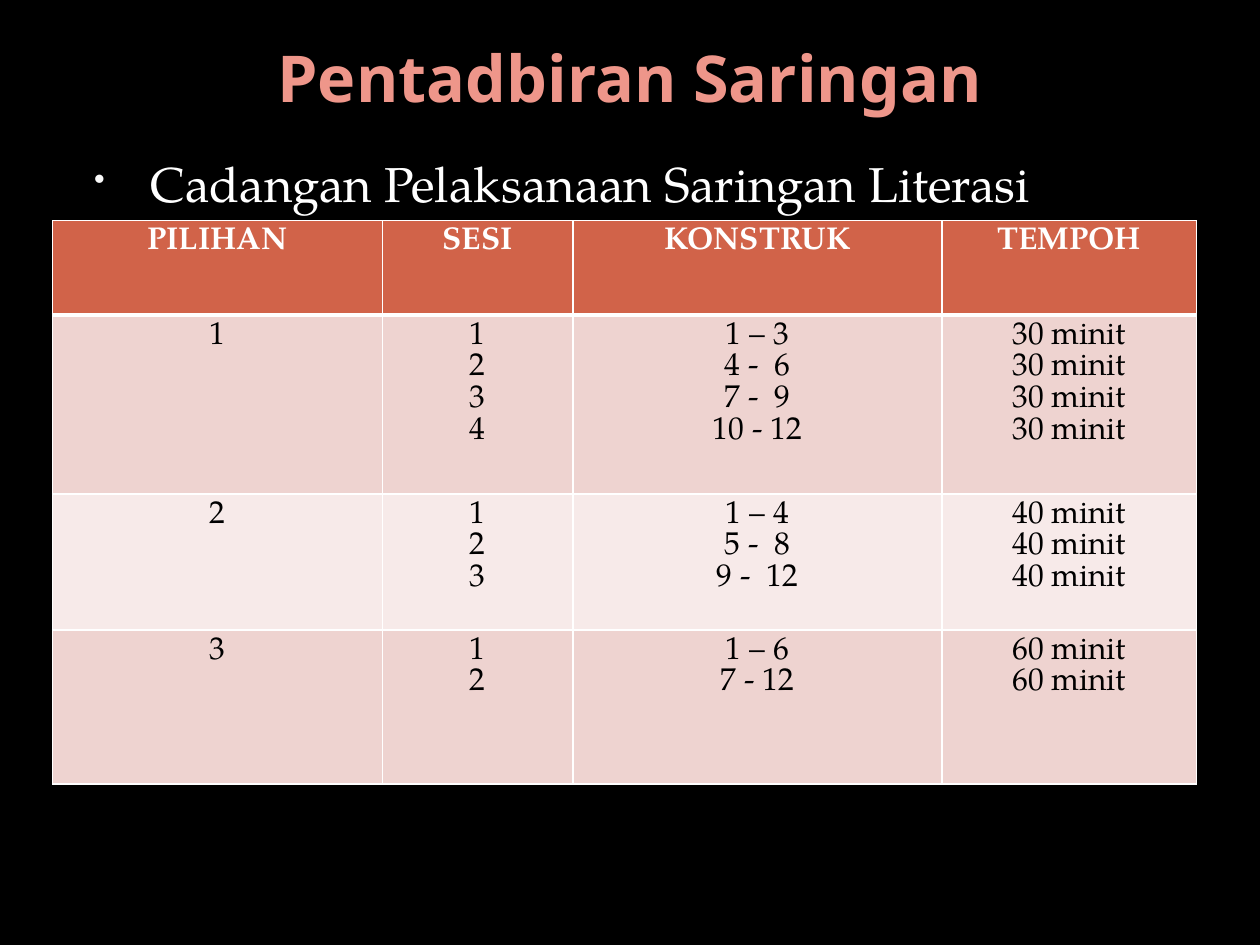
from dataclasses import dataclass

import lxml.etree
import pptx
import pptx.dml.color
import pptx.enum.text
import pptx.oxml.ns
import pptx.util
from pptx.util import Cm

COLOURS = {
    "background": "000000",
    "title": "EE968A",
    "title end": "EC8171",
    "bullet": "F9F9F9",
    "white": "FFFFFF",
    "black": "000000",
    "header": "D16349",
    "odd row": "EED3D0",
    "even row": "F7EAE9",
}
TITLE_FONT = "Noto Sans"
BODY_FONT = "TeX Gyre Pagella"
CENTER = pptx.enum.text.PP_ALIGN.CENTER

COLUMN_WIDTHS = [6.65, 3.84, 7.44, 5.13]
HEADER_HEIGHT = 1.9
HEADINGS = ["PILIHAN", "SESI", "KONSTRUK", "TEMPOH"]


@dataclass
class Option:
    """One way to share the constructs among sessions of equal length."""
    constructs: list[str]
    duration: str
    height: float

    def columns(self, number: int) -> list[list[str]]:
        count = len(self.constructs)
        sessions = [str(session) for session in range(1, count + 1)]
        return [[str(number)], sessions, self.constructs, [self.duration] * count]


OPTIONS = [
    Option(["1 – 3", "4 -  6", "7 -  9", "10 - 12"], "30 minit", 3.61),
    Option(["1 – 4", "5 -  8", "9 -  12"], "40 minit", 2.74),
    Option(["1 – 6", "7 - 12"], "60 minit", 3.1),
]


def colour(name: str) -> pptx.dml.color.RGBColor:
    return pptx.dml.color.RGBColor.from_string(COLOURS[name])


def add_element(parent, tag: str, **attributes: str):
    return lxml.etree.SubElement(parent, pptx.oxml.ns.qn(tag), attributes)


def add_span(para, text: str, font: str, size: float, bold: bool = False):
    span = para.add_run()
    span.text = text
    span.font.name = font
    span.font.size = pptx.util.Pt(size)
    span.font.bold = bold
    return span


def add_box(slide, left: float, top: float, width: float, height: float):
    frame = slide.shapes.add_textbox(Cm(left), Cm(top), Cm(width), Cm(height)).text_frame
    frame.word_wrap = True
    return frame


def add_title(slide, text: str) -> None:
    frame = add_box(slide, 1.27, 0.76, 22.86, 1.57)
    frame.vertical_anchor = pptx.enum.text.MSO_ANCHOR.MIDDLE
    para = frame.paragraphs[0]
    para.alignment = CENTER
    fill = add_span(para, text, TITLE_FONT, 36.9, True).font.fill
    fill.gradient()
    fill.gradient_angle = 280
    stops = [(0.73, "title"), (1, "title end")]
    for stop, (position, name) in zip(fill.gradient_stops, stops):
        stop.position = position
        stop.color.rgb = colour(name)


def add_bullet(slide, text: str) -> None:
    para = add_box(slide, 1.27, 2.97, 22.86, 14.55).paragraphs[0]
    para.space_before = pptx.util.Pt(5.6)
    properties = para._p.get_or_add_pPr()
    properties.set("marL", str(Cm(1.52)))
    properties.set("indent", str(Cm(-1.14)))
    bullet_colour = add_element(properties, "a:buClr")
    add_element(bullet_colour, "a:srgbClr", val=COLOURS["bullet"])
    add_element(properties, "a:buSzPct", val="65000")
    add_element(properties, "a:buChar", char="•")
    add_span(para, text, BODY_FONT, 28).font.color.rgb = colour("white")


def add_borders(cell, top: float, bottom: float) -> None:
    properties = cell._tc.get_or_add_tcPr()
    for side, points in (("L", 1), ("R", 1), ("T", top), ("B", bottom)):
        line = add_element(properties, f"a:ln{side}", w=str(pptx.util.Pt(points)))
        fill = add_element(line, "a:solidFill")
        add_element(fill, "a:srgbClr", val=COLOURS["white"])


def fill_cell(cell, lines: list[str], row: int) -> None:
    is_header = row == 0
    add_borders(cell, top=3 if row == 1 else 1, bottom=3 if is_header else 1)
    cell.fill.solid()
    band = "header" if is_header else "odd row" if row % 2 else "even row"
    cell.fill.fore_color.rgb = colour(band)
    frame = cell.text_frame
    for index, text in enumerate(lines):
        para = frame.add_paragraph() if index else frame.paragraphs[0]
        para.alignment = CENTER
        span = add_span(para, text, BODY_FONT, 18, is_header)
        span.font.color.rgb = colour("white" if is_header else "black")


def add_schedule(slide) -> None:
    contents = [[[heading] for heading in HEADINGS]]
    contents += [option.columns(number) for number, option in enumerate(OPTIONS, 1)]
    heights = [HEADER_HEIGHT] + [option.height for option in OPTIONS]
    table = slide.shapes.add_table(
        len(heights), len(COLUMN_WIDTHS), Cm(1.06), Cm(4.45),
        Cm(sum(COLUMN_WIDTHS)), Cm(sum(heights))).table
    for column, width in zip(table.columns, COLUMN_WIDTHS):
        column.width = Cm(width)
    for row, (height, cells) in enumerate(zip(heights, contents)):
        table.rows[row].height = Cm(height)
        for column, lines in enumerate(cells):
            fill_cell(table.cell(row, column), lines, row)


def main() -> None:
    deck = pptx.Presentation()
    deck.slide_width, deck.slide_height = Cm(25.4), Cm(19.05)
    page = deck.slides.add_slide(deck.slide_layouts[6])
    page.background.fill.solid()
    page.background.fill.fore_color.rgb = colour("background")

    # Heading and introduction
    add_title(page, "Pentadbiran Saringan")
    add_bullet(page, "Cadangan Pelaksanaan Saringan Literasi")

    # Session schedule
    add_schedule(page)
    deck.save("out.pptx")


if __name__ == "__main__":
    main()
